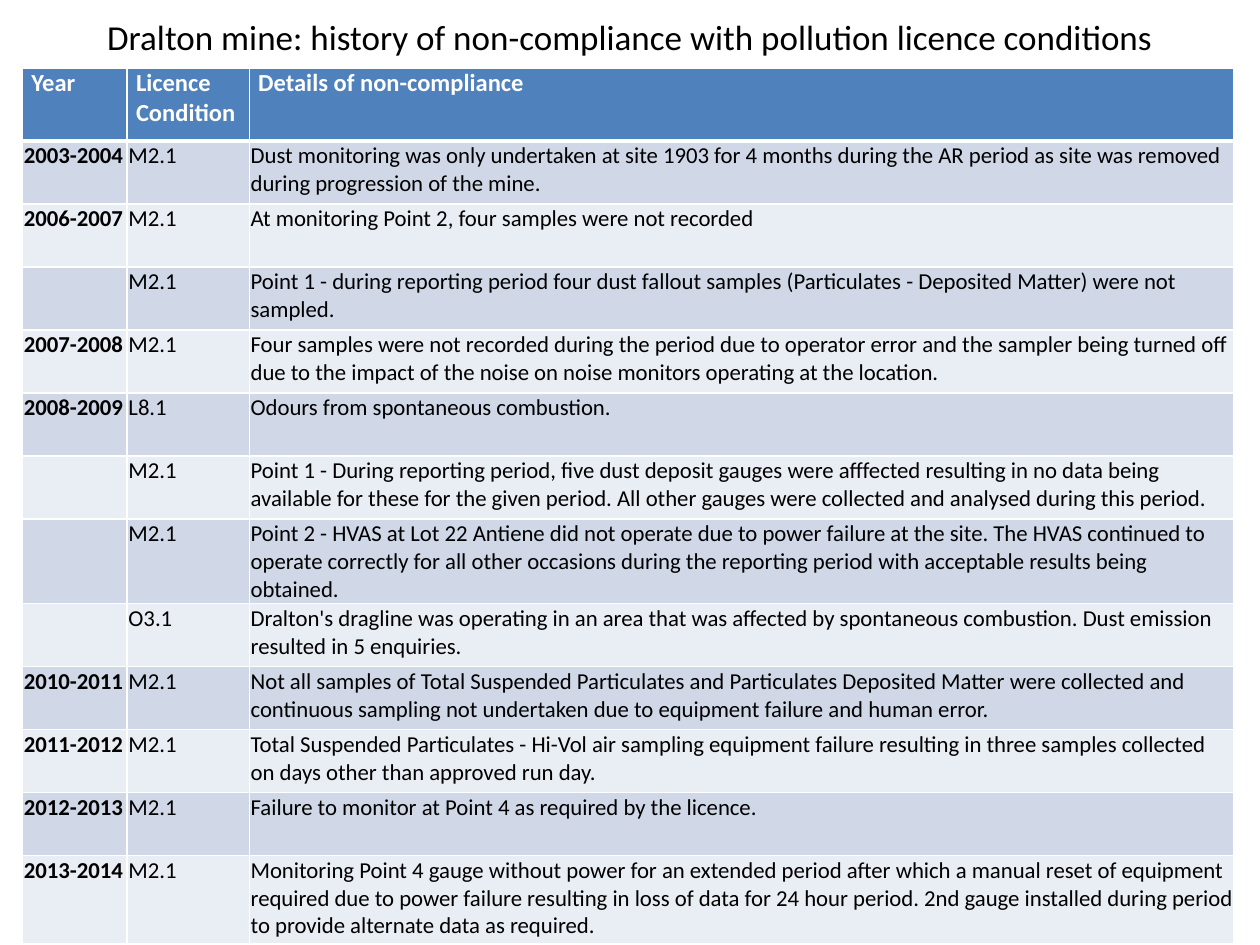
from lxml.etree import SubElement
from pptx import Presentation
from pptx.dml.color import RGBColor
from pptx.enum.text import MSO_ANCHOR, PP_ALIGN
from pptx.oxml.ns import qn
from pptx.util import Inches, Pt

TITLE = "Dralton mine: history of non-compliance with pollution licence conditions"
HEADERS = ("Year", "Licence Condition", "Details of non-compliance")
BREACHES = [
    ("2003-2004", "M2.1", "Dust monitoring was only undertaken at site 1903 for 4 months during the AR "
     "period as site was removed during progression of the mine."),
    ("2006-2007", "M2.1", "At monitoring Point 2, four samples were not recorded"),
    ("", "M2.1", "Point 1 - during reporting period four dust fallout samples (Particulates - "
     "Deposited Matter) were not sampled."),
    ("2007-2008", "M2.1", "Four samples were not recorded during the period due to operator error and the "
     "sampler being turned off due to the impact of the noise on noise monitors operating at the location."),
    ("2008-2009", "L8.1", "Odours from spontaneous combustion."),
    ("", "M2.1", "Point 1 - During reporting period, five dust deposit gauges were afffected resulting in "
     "no data being available for these for the given period. All other gauges were collected and "
     "analysed during this period."),
    ("", "M2.1", "Point 2 - HVAS at Lot 22 Antiene did not operate due to power failure at the site. "
     "The HVAS continued to operate correctly for all other occasions during the reporting period "
     "with acceptable results being obtained."),
    ("", "O3.1", "Dralton's dragline was operating in an area that was affected by spontaneous "
     "combustion. Dust emission resulted in 5 enquiries."),
    ("2010-2011", "M2.1", "Not all samples of Total Suspended Particulates and Particulates Deposited Matter "
     "were collected and continuous sampling not undertaken due to equipment failure and human error."),
    ("2011-2012", "M2.1", "Total Suspended Particulates - Hi-Vol air sampling equipment failure resulting in "
     "three samples collected on days other than approved run day."),
    ("2012-2013", "M2.1", "Failure to monitor at Point 4 as required by the licence."),
    ("2013-2014", "M2.1", "Monitoring Point 4 gauge without power for an extended period after which a manual "
     "reset of equipment required due to power failure resulting in loss of data for 24 hour period. "
     "2nd gauge installed during period to provide alternate data as required."),
]
COLORS = {"header": "4F81BD", "odd": "D0D8E8", "even": "E9EDF4", "white": "FFFFFF", "black": "000000"}
COLUMN_WIDTHS = (0.83, 0.97, 7.81)
HEADER_HEIGHT, ROW_HEIGHT, LAST_HEIGHT = 0.58, 0.5, 0.7


def write_text(frame, text, size, color="black", bold=False, align=PP_ALIGN.LEFT):
    frame.word_wrap = True
    paragraph = frame.paragraphs[0]
    paragraph.alignment = align
    paragraph.font.size = Pt(size)
    if text:
        run = paragraph.add_run()
        run.text = text
        run.font.name = "Calibri"
        run.font.size = Pt(size)
        run.font.bold = bold
        run.font.color.rgb = RGBColor.from_string(COLORS[color])


def add_borders(cell, bottom_width):
    properties = cell._tc.get_or_add_tcPr()
    for side, width in (("L", 1), ("R", 1), ("T", 1), ("B", bottom_width)):
        line = SubElement(properties, qn(f"a:ln{side}"), w=str(Pt(width)))
        fill = SubElement(line, qn("a:solidFill"))
        SubElement(fill, qn("a:srgbClr"), val=COLORS["white"])


def format_cell(cell, text, fill, side_margin, top_margin, bottom_border=1, **text_format):
    cell.margin_left = cell.margin_right = Inches(side_margin)
    cell.margin_top, cell.margin_bottom = Inches(top_margin), 0
    cell.vertical_anchor = MSO_ANCHOR.TOP
    add_borders(cell, bottom_border)
    cell.fill.solid()
    cell.fill.fore_color.rgb = RGBColor.from_string(COLORS[fill])
    write_text(cell.text_frame, text, **text_format)


def add_breach_table(slide):
    heights = [HEADER_HEIGHT] + [ROW_HEIGHT] * (len(BREACHES) - 1) + [LAST_HEIGHT]
    table = slide.shapes.add_table(
        len(heights), len(COLUMN_WIDTHS), Inches(0.18), Inches(0.54),
        Inches(sum(COLUMN_WIDTHS)), Inches(sum(heights))).table
    for column, width in zip(table.columns, COLUMN_WIDTHS):
        column.width = Inches(width)
    for row, height in zip(table.rows, heights):
        row.height = Inches(height)

    for column, text in enumerate(HEADERS):
        format_cell(table.cell(0, column), text, "header", 0.07, 0, bottom_border=3,
                    size=14, color="white", bold=True)
    for row, breach in enumerate(BREACHES, start=1):
        for column, text in enumerate(breach):
            format_cell(table.cell(row, column), text, "odd" if row % 2 else "even", 0.01, 0.01,
                        size=13, bold=column == 0)


def main():
    presentation = Presentation()
    presentation.slide_width, presentation.slide_height = Inches(10), Inches(7.5)
    slide = presentation.slides.add_slide(presentation.slide_layouts[5])
    title = slide.shapes.title
    title.left, title.top, title.width, title.height = map(Inches, (0.72, 0.07, 8.56, 0.44))
    title.text_frame.vertical_anchor = MSO_ANCHOR.MIDDLE
    write_text(title.text_frame, TITLE, size=20, align=PP_ALIGN.CENTER)
    title.text_frame.word_wrap = False
    add_breach_table(slide)
    presentation.save("out.pptx")


if __name__ == "__main__":
    main()
